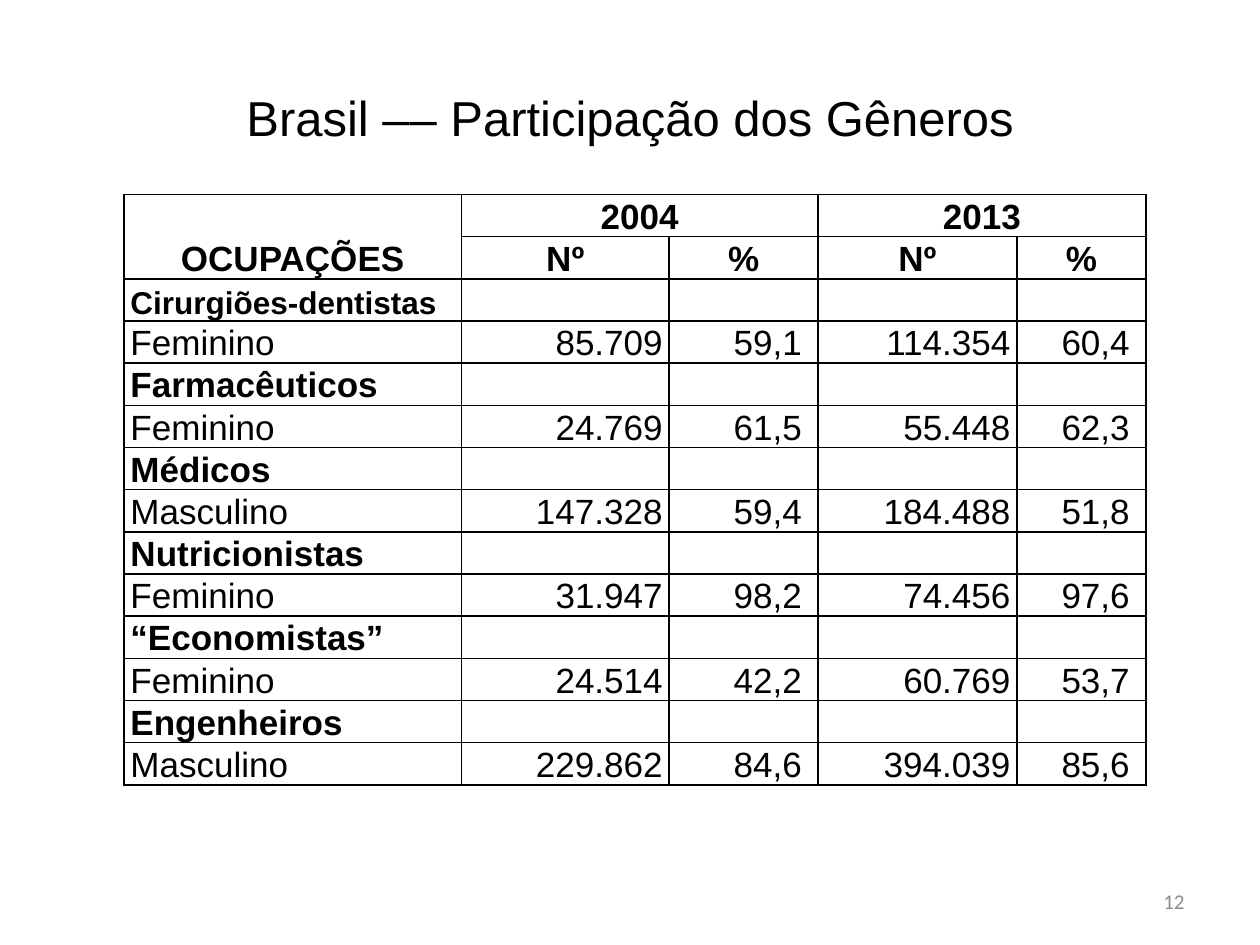
from lxml.etree import SubElement
from pptx import Presentation
from pptx.dml.color import RGBColor
from pptx.enum.text import MSO_ANCHOR as Anchor, PP_ALIGN as Align
from pptx.oxml.ns import qn
from pptx.util import Cm, Pt

BLACK, GREY = "000000", "8C8C8C"
COL_WIDTHS = [6.8, 4.19, 3.0, 4.01, 2.6]
ROW_HEIGHT = 0.85

# occupation, prevailing gender, then number and % for 2004 and for 2013
OCCUPATIONS = [
    ("Cirurgiões-dentistas", "Feminino", "85.709", "59,1", "114.354", "60,4"),
    ("Farmacêuticos", "Feminino", "24.769", "61,5", "55.448", "62,3"),
    ("Médicos", "Masculino", "147.328", "59,4", "184.488", "51,8"),
    ("Nutricionistas", "Feminino", "31.947", "98,2", "74.456", "97,6"),
    ("“Economistas”", "Feminino", "24.514", "42,2", "60.769", "53,7"),
    ("Engenheiros", "Masculino", "229.862", "84,6", "394.039", "85,6"),
]


def rgb(color):
    return RGBColor.from_string(color)


def add_run(p, text, size, font="Arial", color=BLACK, bold=False):
    r = p.add_run()
    r.text = text
    r.font.size = Pt(size)
    r.font.name = font
    r.font.bold = bold
    r.font.color.rgb = rgb(color)


def add_text(s, box, text, size, align, font="Arial", color=BLACK):
    tf = s.shapes.add_textbox(*(Cm(v) for v in box)).text_frame
    tf.word_wrap = True
    tf.vertical_anchor = Anchor.MIDDLE
    p = tf.paragraphs[0]
    p.alignment = align
    add_run(p, text, size, font, color)


def set_borders(cell, color=BLACK, width=1):
    tc_pr = cell._tc.get_or_add_tcPr()
    for i, side in enumerate(("lnL", "lnR", "lnT", "lnB")):
        ln = tc_pr.makeelement(qn(f"a:{side}"), {"w": str(Pt(width))})
        fill = SubElement(ln, qn("a:solidFill"))
        SubElement(fill, qn("a:srgbClr"), val=color)
        tc_pr.insert(i, ln)


def format_cell(cell):
    cell.fill.background()
    set_borders(cell)
    cell.vertical_anchor = Anchor.BOTTOM
    cell.margin_left = cell.margin_right = Cm(0.13)
    cell.margin_top = cell.margin_bottom = 0


def write_cell(cell, text, align=Align.LEFT, size=20, bold=False):
    p = cell.text_frame.paragraphs[0]
    p.alignment = align
    add_run(p, text, size, bold=bold)


def add_gender_table(s, left, top):
    n_rows = 2 + 2 * len(OCCUPATIONS)
    table = s.shapes.add_table(
        n_rows, len(COL_WIDTHS), Cm(left), Cm(top),
        Cm(sum(COL_WIDTHS)), Cm(n_rows * ROW_HEIGHT)).table
    table.first_row = table.horz_banding = False
    for col, width in zip(table.columns, COL_WIDTHS):
        col.width = Cm(width)
    for row in table.rows:
        row.height = Cm(ROW_HEIGHT)
    for cell in table.iter_cells():
        format_cell(cell)

    # Two-level heading
    table.cell(0, 0).merge(table.cell(1, 0))
    write_cell(table.cell(0, 0), "OCUPAÇÕES", Align.CENTER, bold=True)
    for c, year in ((1, "2004"), (3, "2013")):
        table.cell(0, c).merge(table.cell(0, c + 1))
        write_cell(table.cell(0, c), year, Align.CENTER, bold=True)
        write_cell(table.cell(1, c), "Nº", Align.CENTER, bold=True)
        write_cell(table.cell(1, c + 1), "%", Align.CENTER, bold=True)

    # An occupation row followed by its gender row
    for i, (occupation, gender, *values) in enumerate(OCCUPATIONS):
        r = 2 + 2 * i
        write_cell(table.cell(r, 0), occupation, size=18 if i == 0 else 20, bold=True)
        write_cell(table.cell(r + 1, 0), gender)
        for c, value in enumerate(values, 1):
            is_percent = c % 2 == 0
            write_cell(table.cell(r + 1, c), value + " " * is_percent, Align.RIGHT)


def main():
    prs = Presentation()
    prs.slide_width, prs.slide_height = Cm(25.4), Cm(19.05)
    s = prs.slides.add_slide(prs.slide_layouts[6])
    # Title
    add_text(s, (1.27, 0.76, 22.86, 3.18), "Brasil –– Participação dos Gêneros",
             28, Align.CENTER)
    # Table
    add_gender_table(s, 2.5, 3.92)
    # Slide number
    add_text(s, (18.2, 17.66, 5.93, 1.01), "12", 12, Align.RIGHT, "Calibri", GREY)
    prs.save("out.pptx")


if __name__ == "__main__":
    main()
